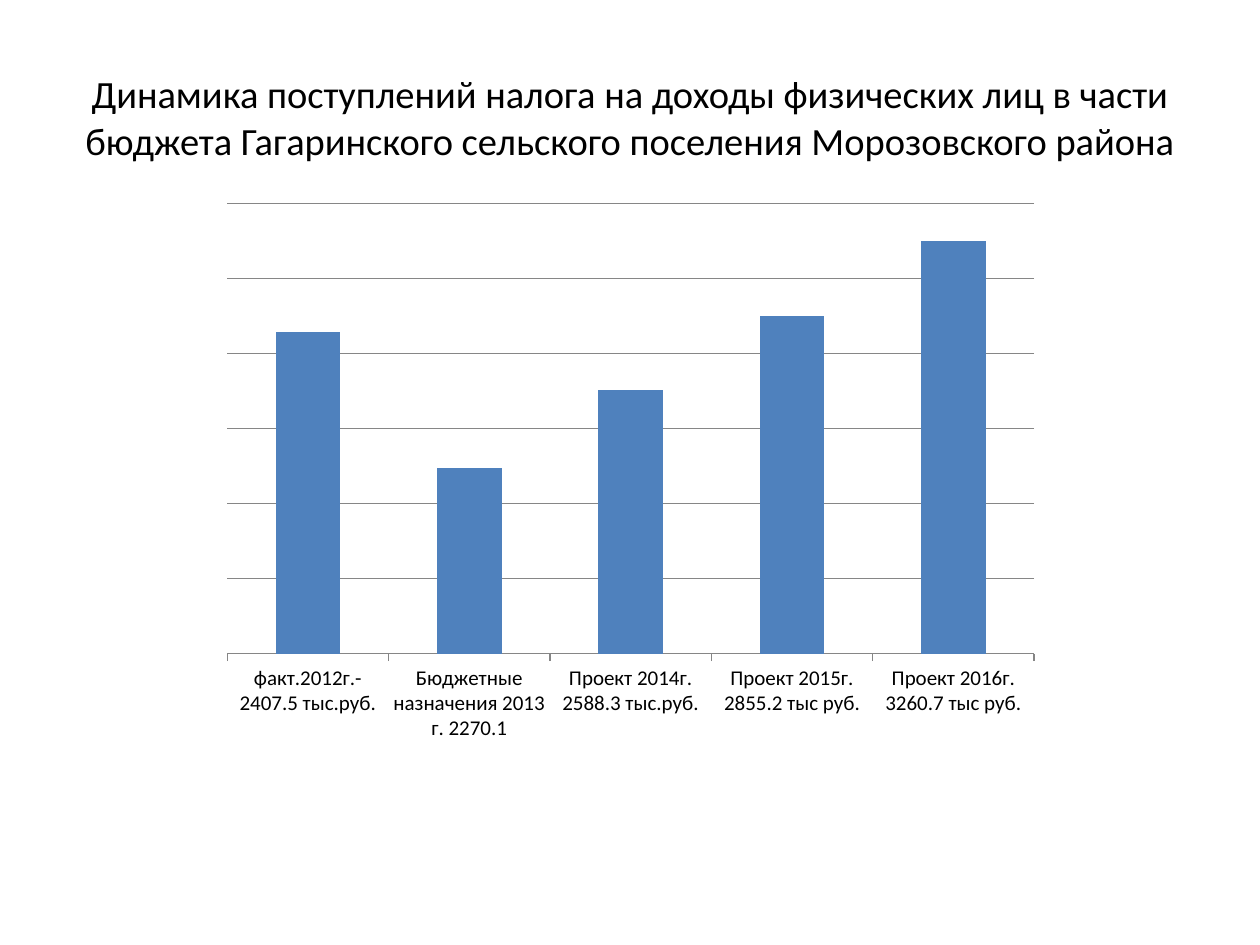
"""Build a slide with a column chart of income tax receipts."""
from typing import NamedTuple

from pptx import Presentation
from pptx.chart.data import CategoryChartData as Data
from pptx.dml.color import RGBColor
from pptx.enum.chart import XL_CHART_TYPE as Kind, XL_TICK_LABEL_POSITION as Label
from pptx.enum.chart import XL_TICK_MARK as Tick
from pptx.enum.text import MSO_ANCHOR as Anchor, PP_ALIGN as Align
from pptx.util import Inches, Pt

BLACK = RGBColor(0x00, 0x00, 0x00)
BLUE = RGBColor(0x4F, 0x81, 0xBD)
GRAY = RGBColor(0x86, 0x86, 0x86)
FONT = "Calibri"
STEP = 18.18


class Bar(NamedTuple):
    label: str
    value: int


BARS = [
    Bar("факт.2012г.- 2407.5 тыс.руб.", 78),
    Bar("Бюджетные назначения 2013 г. 2270.1", 45),
    Bar("Проект 2014г. 2588.3 тыс.руб.", 64),
    Bar("Проект 2015г. 2855.2 тыс руб.", 82),
    Bar("Проект 2016г. 3260.7 тыс руб.", 100),
]


def style(font, size: float) -> None:
    """Set the shared typeface and colour at a given size."""
    font.name = FONT
    font.size = Pt(size)
    font.color.rgb = BLACK


def rule(line) -> None:
    """Make a thin gray line."""
    line.color.rgb = GRAY
    line.width = Pt(0.75)


def add_title(slide, text: str) -> None:
    """Place and format the title."""
    title = slide.shapes.title
    title.left, title.top = Inches(0.5), Inches(0.3)
    title.width, title.height = Inches(9), Inches(1.25)
    frame = title.text_frame
    frame.text = text
    frame.word_wrap = True
    frame.vertical_anchor = Anchor.MIDDLE
    para = frame.paragraphs[0]
    para.alignment = Align.CENTER
    style(para.runs[0].font, 22)


def add_bars(slide, bars: list[Bar]) -> None:
    """Draw the column chart."""
    data = Data()
    data.categories = [bar.label for bar in bars]
    data.add_series("Series 1", [bar.value for bar in bars])
    chart = slide.shapes.add_chart(
        Kind.COLUMN_CLUSTERED, Inches(1.67), Inches(1.53),
        Inches(6.67), Inches(4.44), data).chart
    chart.has_title = False
    chart.has_legend = False
    style(chart.font, 18)

    plot = chart.plots[0]
    plot.gap_width = 150
    plot.vary_by_categories = False
    fill = plot.series[0].format.fill
    fill.solid()
    fill.fore_color.rgb = BLUE

    base = chart.category_axis
    base.major_tick_mark = Tick.OUTSIDE
    base.tick_label_position = Label.NEXT_TO_AXIS
    style(base.tick_labels.font, 12)
    rule(base.format.line)

    scale = chart.value_axis
    scale.visible = False
    scale.minimum_scale = 0
    scale.maximum_scale = round(6 * STEP, 2)
    scale.major_unit = STEP
    scale.has_major_gridlines = True
    rule(scale.major_gridlines.format.line)


def main() -> None:
    """Build and save the slide."""
    deck = Presentation()
    deck.slide_width, deck.slide_height = Inches(10), Inches(7.5)
    slide = deck.slides.add_slide(deck.slide_layouts[5])
    add_title(slide, "Динамика поступлений налога на доходы физических лиц в части "
                     "бюджета Гагаринского сельского поселения Морозовского района")
    add_bars(slide, BARS)
    deck.save("out.pptx")


if __name__ == "__main__":
    main()
